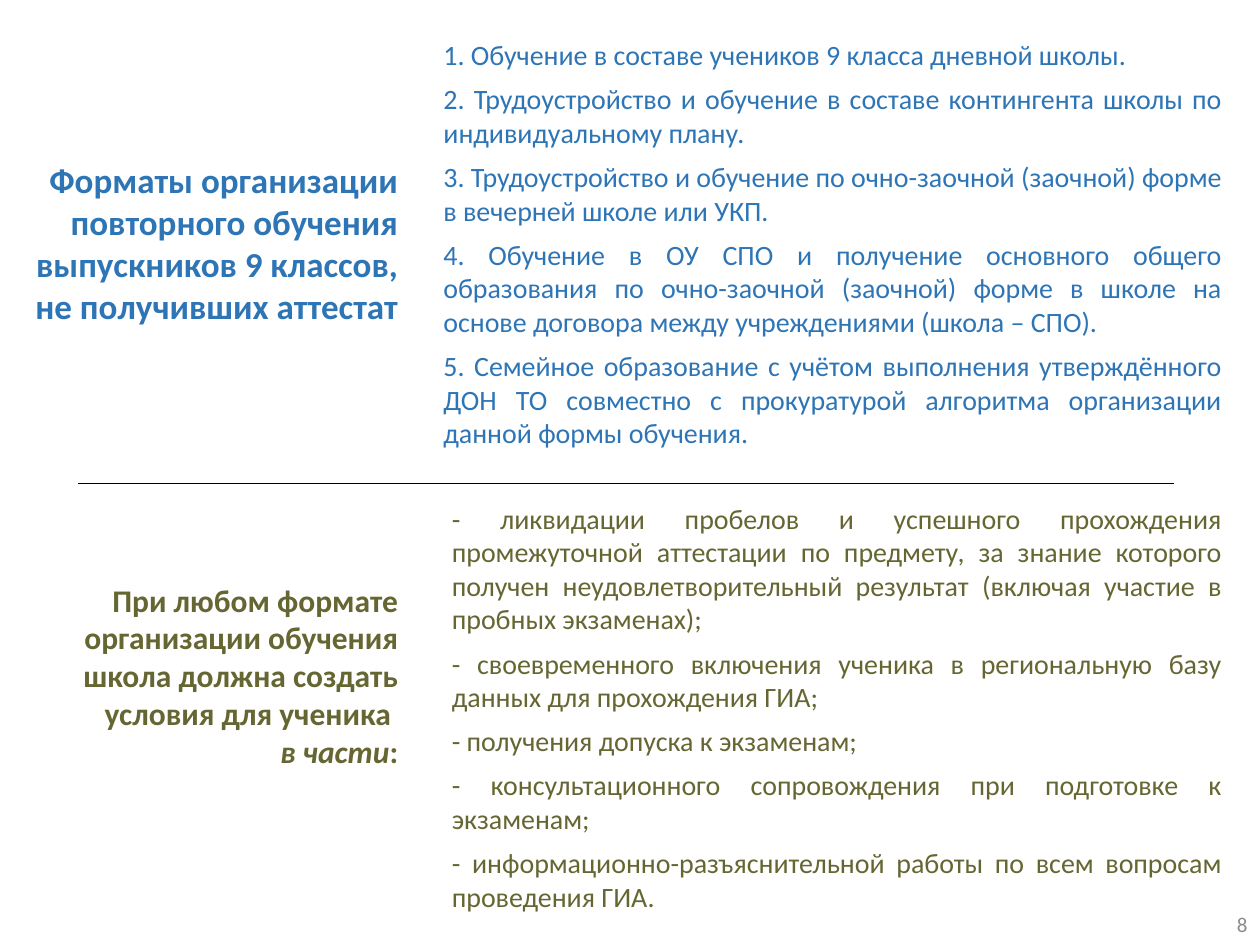
from dataclasses import dataclass

from lxml.etree import SubElement
from pptx import Presentation
from pptx.dml.color import RGBColor
from pptx.enum.shapes import MSO_CONNECTOR as Connector, MSO_SHAPE as Preset
from pptx.enum.text import MSO_ANCHOR as Anchor, MSO_AUTO_SIZE as AutoSize, PP_ALIGN as Align
from pptx.oxml.ns import qn
from pptx.util import Cm, Pt


@dataclass(frozen=True)
class Theme:
    """Colours, font and type sizes of the slide."""
    font: str = "Calibri"
    blue: str = "2E75B6"
    olive: str = "666633"
    grey: str = "8C8C8C"
    white: str = "FFFFFF"
    black: str = "000000"
    title: int = 20
    heading: int = 18
    body: int = 16
    number: int = 12


@dataclass(frozen=True)
class Box:
    """A rectangle in centimetres."""
    left: float
    top: float
    width: float
    height: float

    def inner(self, left, top, width, height):
        """Return a box placed relative to this one."""
        return Box(self.left + left, self.top + top, width, height)

    def lengths(self):
        """Return the four sides as slide lengths."""
        return [Cm(side) for side in (self.left, self.top, self.width, self.height)]


THEME = Theme()
FORMATS = [
    "1. Обучение в составе учеников 9 класса дневной школы.",
    "2. Трудоустройство и обучение в составе контингента школы по индивидуальному плану.",
    "3. Трудоустройство и обучение по очно-заочной (заочной) форме в вечерней школе или УКП.",
    "4. Обучение в ОУ СПО и получение основного общего образования по очно-заочной (заочной) "
    "форме в школе на основе договора между учреждениями (школа – СПО).",
    "5. Семейное образование с учётом выполнения утверждённого ДОН ТО совместно с прокуратурой "
    "алгоритма организации данной формы обучения.",
]
CONDITIONS = [
    "- ликвидации пробелов и успешного прохождения промежуточной аттестации по предмету, "
    "за знание которого получен неудовлетворительный результат (включая участие в пробных экзаменах);",
    "- своевременного включения ученика в региональную базу данных для прохождения ГИА;",
    "- получения допуска к экзаменам;",
    "- консультационного сопровождения при подготовке к экзаменам;",
    "- информационно-разъяснительной работы по всем вопросам проведения ГИА.",
]
TITLE = ["Форматы организации повторного обучения выпускников 9 классов, не получивших аттестат"]
HEADING = [
    "При любом формате организации обучения школа должна создать условия для ученика ",
    [("в части", True), (":", False)],
]


def write_text(shape, paragraphs, *, size, color, align, bold=False, after=0, anchor=Anchor.TOP):
    """Fill a shape with paragraphs, each a string or a list of (text, italic) runs."""
    frame = shape.text_frame
    frame.word_wrap = True
    frame.auto_size = AutoSize.NONE
    frame.vertical_anchor = anchor
    for index, content in enumerate(paragraphs):
        paragraph = frame.add_paragraph() if index else frame.paragraphs[0]
        paragraph.alignment = align
        paragraph.space_after = Pt(after)
        runs = [(content, False)] if isinstance(content, str) else content
        for text, italic in runs:
            run = paragraph.add_run()
            run.text = text
            font = run.font
            font.name, font.size, font.bold, font.italic = THEME.font, Pt(size), bold, italic
            font.color.rgb = RGBColor.from_string(color)


def add_heading(slide, box, paragraphs, *, size, color, is_title):
    """Place a white heading panel, using the title placeholder if asked."""
    if is_title:
        shape = slide.shapes.title
        shape.left, shape.top, shape.width, shape.height = box.lengths()
    else:
        shape = slide.shapes.add_shape(Preset.RECTANGLE, *box.lengths())
        shape.shadow.inherit = False
    shape.fill.solid()
    shape.fill.fore_color.rgb = RGBColor.from_string(THEME.white)
    shape.line.fill.background()
    write_text(shape, paragraphs, size=size, color=color, align=Align.RIGHT, bold=True)


def add_band(slide, box, heading, items, *, heading_box, body_left, size, color, is_title=False):
    """Place a heading on the left of the box and its list on the right."""
    add_heading(slide, box.inner(*heading_box), heading, size=size, color=color, is_title=is_title)
    body_box = box.inner(body_left, 0, box.width - body_left, box.height)
    body = slide.shapes.add_textbox(*body_box.lengths())
    write_text(body, items, size=THEME.body, color=color, align=Align.JUSTIFY, after=6)


def add_divider(slide, box):
    """Draw the thin rule along the top of the box."""
    left, top, width, _ = box.lengths()
    divider = slide.shapes.add_connector(Connector.STRAIGHT, left, top, left + width, top)
    divider.line.color.rgb = RGBColor.from_string(THEME.black)
    divider.line.width = Pt(0.5)
    SubElement(divider._element.spPr, qn("a:effectLst"))


def add_number(slide, box, number):
    """Place the slide number in the box."""
    shape = slide.shapes.add_textbox(*box.lengths())
    write_text(shape, [number], size=THEME.number, color=THEME.grey, align=Align.RIGHT, anchor=Anchor.MIDDLE)


def main():
    """Build and save the slide."""
    presentation = Presentation()
    presentation.slide_width, presentation.slide_height = Cm(25.4), Cm(19.05)
    slide = presentation.slides.add_slide(presentation.slide_layouts[5])
    add_number(slide, Box(19.69, 18.11, 5.71, 1.02), "8")
    add_band(slide, Box(0, 0.64, 24.89, 8.64), TITLE, FORMATS, heading_box=(0, 2.43, 8.28, 3.68),
             body_left=8.69, size=THEME.title, color=THEME.blue, is_title=True)
    add_band(slide, Box(-0.2, 9.98, 25.09, 8.64), HEADING, CONDITIONS, heading_box=(0, 1.6, 8.48, 4.11),
             body_left=9.06, size=THEME.heading, color=THEME.olive)
    add_divider(slide, Box(1.57, 9.75, 22.1, 0))
    presentation.save("out.pptx")


if __name__ == "__main__":
    main()
